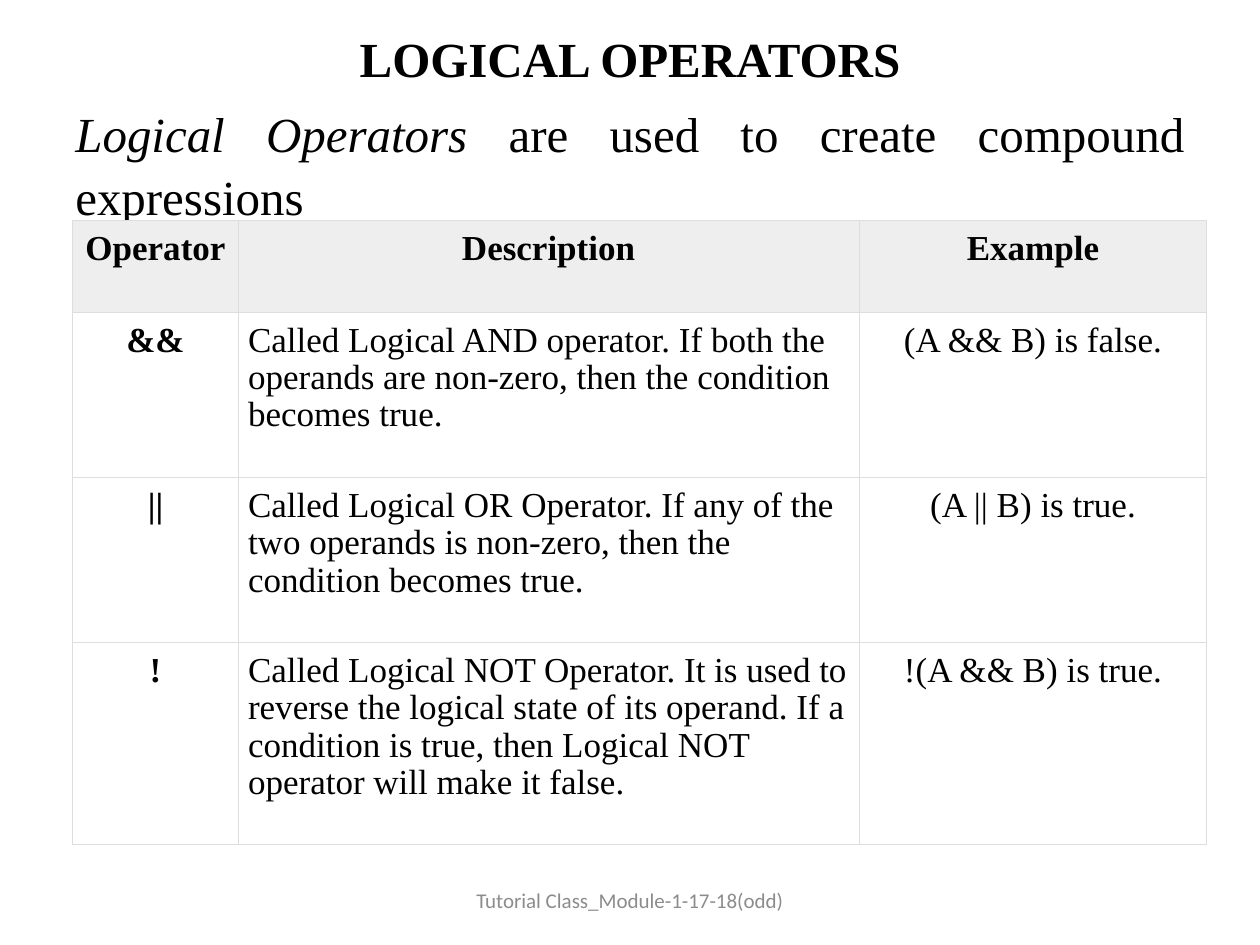
"""Build the slide on logical operators with its table of examples."""
from lxml.etree import SubElement
from pptx import Presentation
from pptx.dml.color import RGBColor
from pptx.enum.text import MSO_ANCHOR, PP_ALIGN
from pptx.oxml.ns import qn
from pptx.util import Cm, Pt


def set_colour(colour_format, value):
    colour_format.rgb = RGBColor.from_string(value)


def write(frame, *texts, size=20, font="Times New Roman", colour="000000", bold=False,
          italic_first=False, align=PP_ALIGN.CENTER, spacing=1.0):
    paragraph = frame.paragraphs[0]
    paragraph.alignment = align
    paragraph.line_spacing = spacing
    for index, text in enumerate(texts):
        run = paragraph.add_run()
        run.text = text
        run.font.name = font
        run.font.size = Pt(size)
        run.font.bold = bold
        run.font.italic = italic_first and index == 0
        set_colour(run.font.color, colour)


presentation = Presentation()
presentation.slide_width = Cm(25.4)
presentation.slide_height = Cm(19.05)
slide = presentation.slides.add_slide(presentation.slide_layouts[5])

title = slide.shapes.title
title.left, title.top, title.width, title.height = Cm(1.27), Cm(0.43), Cm(22.86), Cm(1.47)
title.text_frame.vertical_anchor = MSO_ANCHOR.MIDDLE
write(title.text_frame, "LOGICAL OPERATORS", size=28, bold=True)

intro = slide.shapes.add_textbox(Cm(1.27), Cm(1.9), Cm(22.86), Cm(2.5))
intro.text_frame.word_wrap = True
write(intro.text_frame, "Logical Operators ", "are used to create compound expressions",
      size=28, italic_first=True, align=PP_ALIGN.JUSTIFY, spacing=1.06)

footer = slide.shapes.add_textbox(Cm(8.68), Cm(17.65), Cm(8.04), Cm(1.01))
footer.text_frame.word_wrap = True
footer.text_frame.vertical_anchor = MSO_ANCHOR.MIDDLE
write(footer.text_frame, "Tutorial Class_Module-1-17-18(odd)", size=12, font="Calibri",
      colour="8C8C8C")

rows = [
    ("Operator", "Description", "Example"),
    ("&&", "Called Logical AND operator. If both the operands are non-zero, "
     "then the condition becomes true.", "(A && B) is false."),
    ("||", "Called Logical OR Operator. If any of the two operands is non-zero, "
     "then the condition becomes true.", "(A || B) is true."),
    ("!", "Called Logical NOT Operator. It is used to reverse the logical state of its "
     "operand. If a condition is true, then Logical NOT operator will make it false.",
     "!(A && B) is true."),
]
column_widths = [3.33, 12.52, 7.01]
row_heights = [1.85, 3.33, 3.33, 4.06]
table = slide.shapes.add_table(len(rows), len(column_widths), Cm(1.47), Cm(4.45),
                               Cm(sum(column_widths)), Cm(sum(row_heights))).table
for column, width in zip(table.columns, column_widths):
    column.width = Cm(width)
for row, height in zip(table.rows, row_heights):
    row.height = Cm(height)

for row_index, row in enumerate(rows):
    for column_index, text in enumerate(row):
        cell = table.cell(row_index, column_index)
        is_header = row_index == 0
        is_description = column_index == 1 and not is_header
        cell.margin_left = cell.margin_right = Cm(0.2)
        cell.margin_top = cell.margin_bottom = Cm(0.2)
        write(cell.text_frame, text, bold=is_header or column_index == 0,
              align=PP_ALIGN.LEFT if is_description else PP_ALIGN.CENTER, spacing=0.96)
        properties = cell._tc.get_or_add_tcPr()
        for side in ("a:lnL", "a:lnR", "a:lnT", "a:lnB"):
            border = SubElement(properties, qn(side), w=str(Pt(0.75)))
            border_fill = SubElement(border, qn("a:solidFill"))
            SubElement(border_fill, qn("a:srgbClr"), val="DDDDDD")
        cell.fill.solid()
        set_colour(cell.fill.fore_color, "EEEEEE" if is_header else "FFFFFF")

presentation.save("out.pptx")
